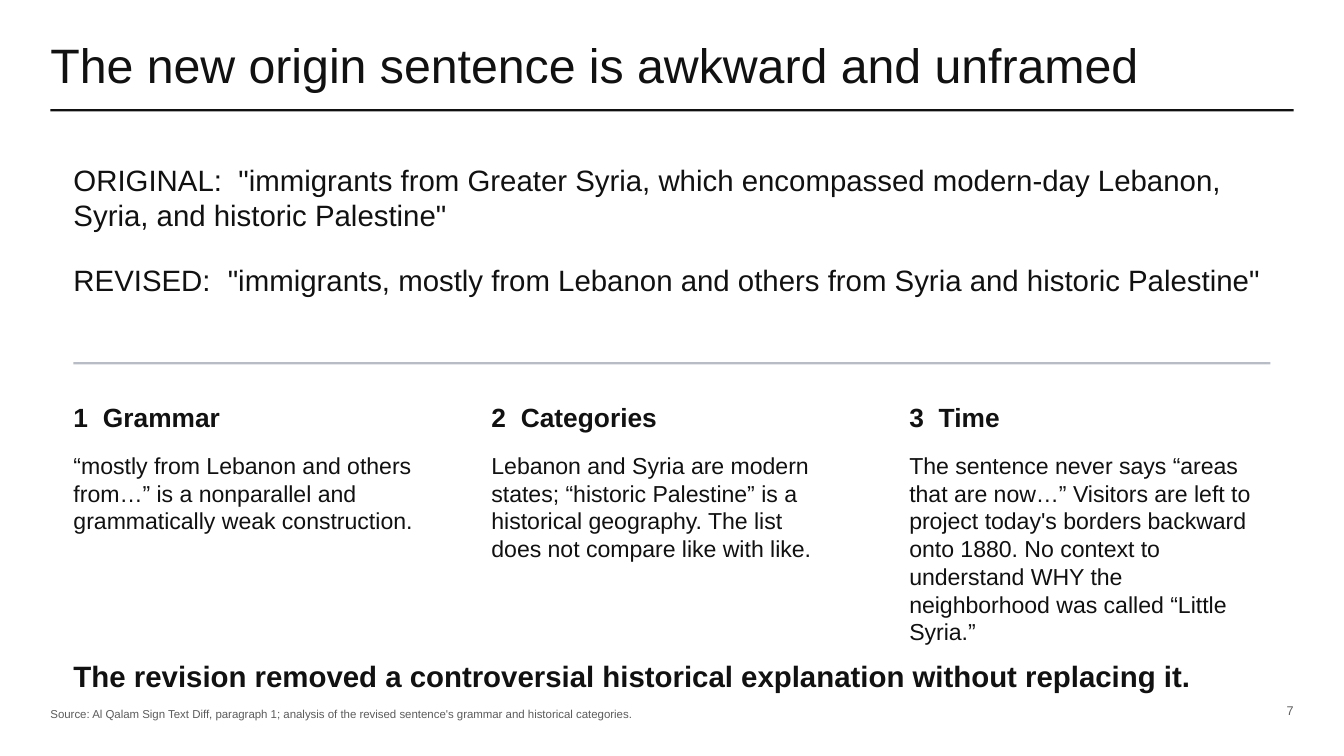
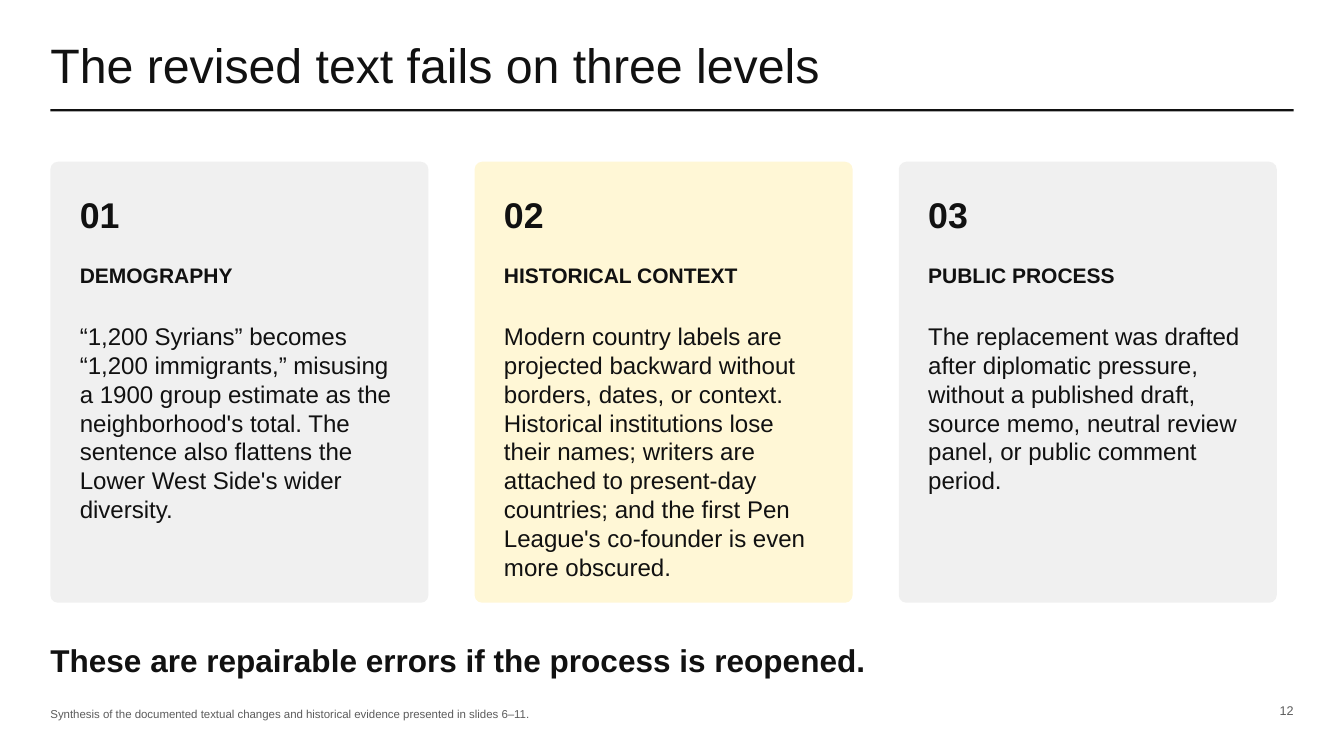
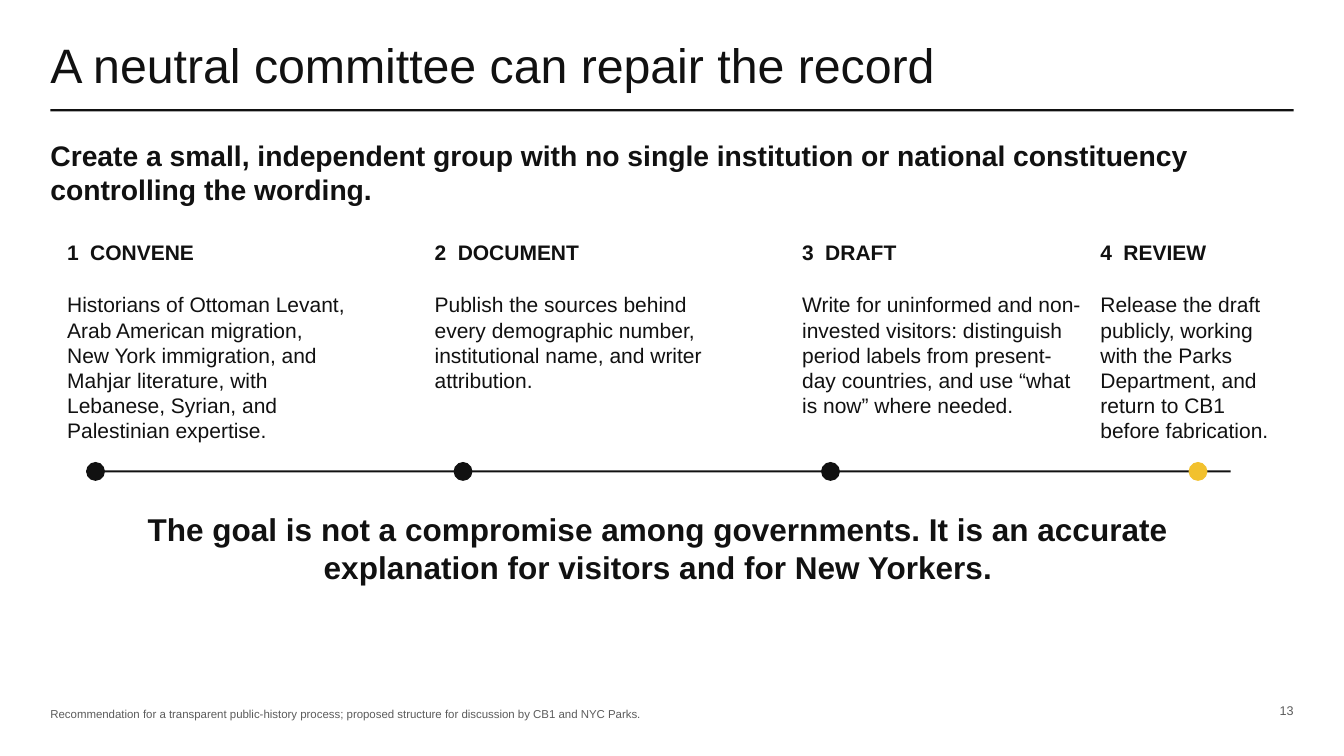
from lxml.etree import SubElement
from pptx import Presentation
from pptx.dml.color import RGBColor
from pptx.enum.shapes import MSO_SHAPE as Shape
from pptx.enum.text import PP_ALIGN as Align
from pptx.oxml.ns import qn
from pptx.util import Pt

PX = 9525
FONT = "Arial"
INK, GREY, RULE = "111111", "5C5C5C", "B8BCC4"
CARD, CARD_ACCENT, ACCENT = "F0F0F0", "FFF7D6", "F2C12E"


def add_text(slide, text, box, size, bold=False, color=INK, align=Align.LEFT, tab=None):
    shape = slide.shapes.add_textbox(*(n * PX for n in box))
    frame = shape.text_frame
    frame.word_wrap = True
    frame.margin_left = frame.margin_right = frame.margin_top = frame.margin_bottom = 0
    paragraph = frame.paragraphs[0]
    paragraph.text = text
    paragraph.alignment = align
    if tab:
        properties = paragraph._p.get_or_add_pPr()
        stops = SubElement(properties, qn("a:tabLst"))
        SubElement(stops, qn("a:tab"), pos=str(tab * PX), algn="l")
    paragraph.font.name = FONT
    paragraph.font.size = Pt(size)
    paragraph.font.bold = bold
    paragraph.font.color.rgb = RGBColor.from_string(color)


def add_block(slide, kind, box, color):
    shape = slide.shapes.add_shape(kind, *(n * PX for n in box))
    shape.shadow.inherit = False
    shape.fill.solid()
    shape.fill.fore_color.rgb = RGBColor.from_string(color)
    shape.line.fill.background()
    return shape


presentation = Presentation()
presentation.slide_width = 1280 * PX
presentation.slide_height = 720 * PX

# Shared frame: title, rule, source line, page number
pages = [
    ("The new origin sentence is awkward and unframed",
     "Source: Al Qalam Sign Text Diff, paragraph 1; analysis of the revised sentence's "
     "grammar and historical categories.", "7"),
    ("The revised text fails on three levels",
     "Synthesis of the documented textual changes and historical evidence presented in "
     "slides 6–11.", "12"),
    ("A neutral committee can repair the record",
     "Recommendation for a transparent public-history process; proposed structure for "
     "discussion by CB1 and NYC Parks.", "13"),
]
slides = []
for title, source, number in pages:
    slide = presentation.slides.add_slide(presentation.slide_layouts[6])
    add_text(slide, title, (48, 34, 1180, 62), 34.5)
    add_block(slide, Shape.RECTANGLE, (48, 104, 1184, 2), INK)
    add_text(slide, source, (48, 673, 1080, 22), 8.2, color=GREY)
    add_text(slide, number, (1184, 669, 48, 24), 9, color=GREY, align=Align.RIGHT)
    slides.append(slide)
sentence_slide, levels_slide, committee_slide = slides

# Origin sentence: two wordings
wordings = [
    ("ORIGINAL:\t\"immigrants from Greater Syria, which encompassed modern-day Lebanon, "
     "Syria, and historic Palestine\"", 157),
    ("REVISED:\t\"immigrants, mostly from Lebanon and others from Syria and historic "
     "Palestine\"", 147),
]
for i, (wording, tab) in enumerate(wordings):
    add_text(sentence_slide, wording, (70, 154 + 96 * i, 1140, 78), 21, tab=tab)
add_block(sentence_slide, Shape.RECTANGLE, (70, 345, 1140, 2), RULE)

# Origin sentence: three problems
problems = [
    ("Grammar", "“mostly from Lebanon and others from…” is a nonparallel and "
     "grammatically weak construction."),
    ("Categories", "Lebanon and Syria are modern states; “historic Palestine” is a "
     "historical geography. The list does not compare like with like."),
    ("Time", "The sentence never says “areas that are now…” Visitors are left to project "
     "today's borders backward onto 1880. No context to understand WHY the neighborhood "
     "was called “Little Syria.”"),
]
for i, (heading, body) in enumerate(problems):
    left = 70 + 398 * i
    add_text(sentence_slide, f"{i + 1}\t{heading}", (left, 382, 330, 34), 18.8, bold=True, tab=28)
    add_text(sentence_slide, body, (left, 430, 330, 144), 16.5)
add_text(sentence_slide,
         "The revision removed a controversial historical explanation without replacing it.",
         (70, 627, 1120, 42), 21, bold=True)

# Three levels: cards
levels = [
    ("DEMOGRAPHY", CARD,
     "“1,200 Syrians” becomes “1,200 immigrants,” misusing a 1900 group estimate as the "
     "neighborhood's total. The sentence also flattens the Lower West Side's wider "
     "diversity."),
    ("HISTORICAL CONTEXT", CARD_ACCENT,
     "Modern country labels are projected backward without borders, dates, or context. "
     "Historical institutions lose their names; writers are attached to present-day "
     "countries; and the first Pen League's co-founder is even more obscured."),
    ("PUBLIC PROCESS", CARD,
     "The replacement was drafted after diplomatic pressure, without a published draft, "
     "source memo, neutral review panel, or public comment period."),
]
for i, (heading, color, body) in enumerate(levels):
    left = 48 + 404 * i
    card = add_block(levels_slide, Shape.ROUNDED_RECTANGLE, (left, 154, 360, 420), color)
    card.adjustments[0] = 0.02
    add_text(levels_slide, f"{i + 1:02}", (left + 28, 184, 80, 48), 25.5, bold=True)
    add_text(levels_slide, heading, (left + 28, 250, 304, 34), 15, bold=True)
    add_text(levels_slide, body, (left + 28, 306, 304, 224), 17.2)
add_text(levels_slide, "These are repairable errors if the process is reopened.",
         (48, 610, 1140, 42), 22.5, bold=True)

# Committee: lead sentence and timeline
add_text(committee_slide,
         "Create a small, independent group with no single institution or national "
         "constituency controlling the wording.", (48, 132, 1168, 66), 20.2, bold=True)
add_block(committee_slide, Shape.RECTANGLE, (82, 448, 1090, 2), INK)
steps = [
    ("CONVENE", 64, 270,
     "Historians of Ottoman Levant, Arab American migration, New York immigration, and "
     "Mahjar literature, with Lebanese, Syrian, and Palestinian expertise."),
    ("DOCUMENT", 414, 270,
     "Publish the sources behind every demographic number, institutional name, and writer "
     "attribution."),
    ("DRAFT", 764, 270,
     "Write for uninformed and non-invested visitors: distinguish period labels from "
     "present-day countries, and use “what is now” where needed."),
    ("REVIEW", 1048, 168,
     "Release the draft publicly, working with the Parks Department, and return to CB1 "
     "before fabrication."),
]
for i, (heading, left, width, body) in enumerate(steps):
    dot_color = ACCENT if heading == "REVIEW" else INK
    add_block(committee_slide, Shape.OVAL, (82 + 350 * i, 440, 18, 18), dot_color)
    add_text(committee_slide, f"{i + 1}\t{heading}", (left, 228, width, 32), 15, bold=True, tab=22)
    add_text(committee_slide, body, (left, 278, width, 152), 15)
add_text(committee_slide,
         "The goal is not a compromise among governments. It is an accurate explanation for "
         "visitors and for New Yorkers.",
         (82, 486, 1090, 90), 22.5, bold=True, align=Align.CENTER)

presentation.save("out.pptx")
